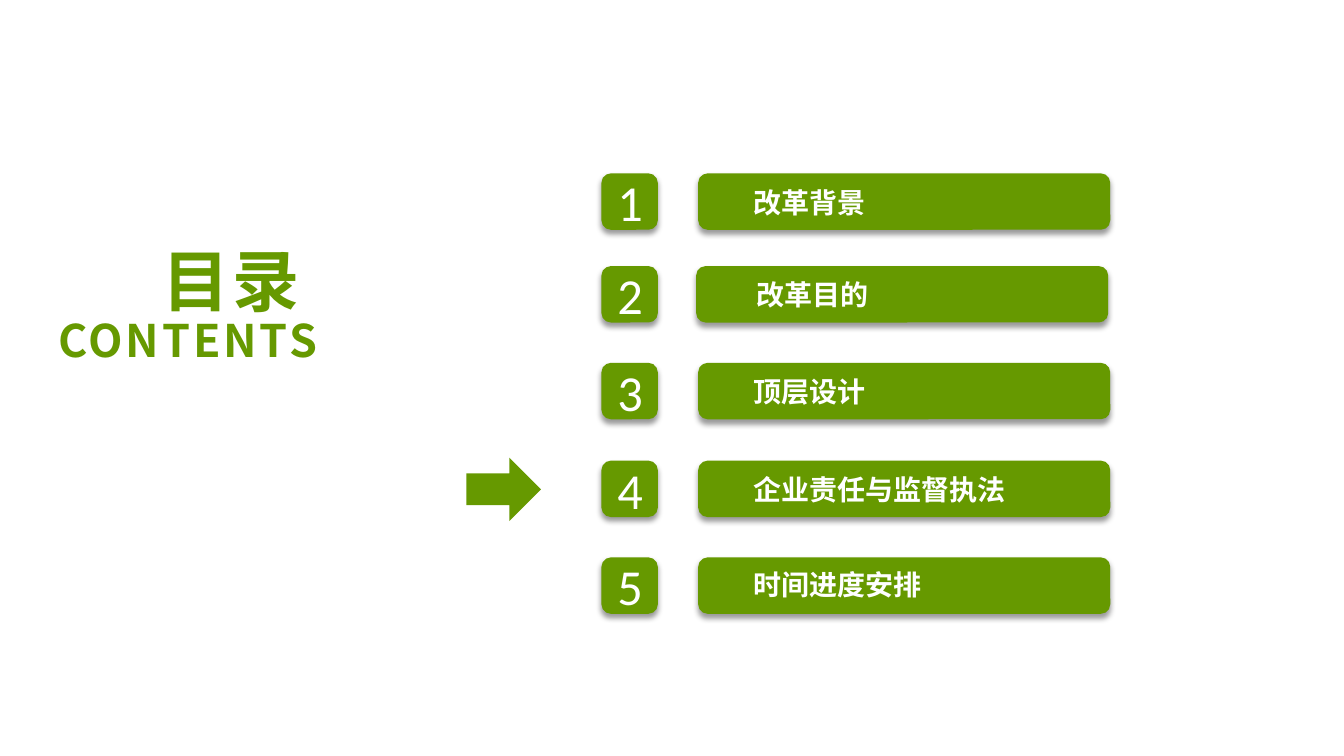
from lxml import etree
from pptx import Presentation
from pptx import util as u
from pptx.dml.color import RGBColor
from pptx.enum import shapes, text
from pptx.oxml import ns

GREEN = RGBColor(0x66, 0x99, 0x00)
WHITE = RGBColor(0xFF, 0xFF, 0xFF)
CJK_FONT = "Noto Sans CJK SC"
NUMBER_FONT = "Calibri"

BOX = 0.56
NUMBER_LEFT = 5.97
BAR_WIDTH = 4.09
# label, top, bar left, label left, label drop below the bar's top
CHAPTERS = [
    ("改革背景", 1.72, 6.93, 7.35, 0.05),
    ("改革目的", 2.64, 6.91, 7.38, 0.04),
    ("顶层设计", 3.60, 6.93, 7.35, 0.05),
    ("企业责任与监督执法", 4.57, 6.93, 7.35, 0.05),
    ("时间进度安排", 5.53, 6.93, 7.35, 0.03),
]


class ContentsSlide:
    def __init__(self, prs):
        self.s = prs.slides.add_slide(prs.slide_layouts[5])

    def place(self, sp, left, top, width, height):
        sp.left, sp.top = u.Inches(left), u.Inches(top)
        sp.width, sp.height = u.Inches(width), u.Inches(height)

    def frame(self, sp, anchor):
        tf = sp.text_frame
        tf.word_wrap = True
        tf.auto_size = text.MSO_AUTO_SIZE.NONE
        tf.vertical_anchor = anchor
        tf.margin_left = tf.margin_right = u.Inches(0.13)
        tf.margin_top = tf.margin_bottom = u.Inches(0.07)
        return tf

    def style(self, p, size, color, font=CJK_FONT, bold=True, spacing=0):
        """Format a paragraph's runs, with the East Asian font and letter spacing."""
        p.font.size, p.font.bold = u.Pt(size), bold
        p.font.name, p.font.color.rgb = font, color
        for r in p.runs:
            rpr = r._r.get_or_add_rPr()
            etree.SubElement(rpr, ns.qn("a:ea"), typeface=font)
            if spacing:
                rpr.set("spc", str(spacing * 100))

    def title(self, lines, left, top, width, height):
        sp = self.s.shapes.title
        self.place(sp, left, top, width, height)
        tf = self.frame(sp, text.MSO_ANCHOR.TOP)
        tf.text = "\n".join(line for line, _ in lines)
        for p, (_, size) in zip(tf.paragraphs, lines):
            p.alignment = text.PP_ALIGN.RIGHT
            p.line_spacing = 0.85
            self.style(p, size, GREEN, spacing=2)

    def shape(self, kind, left, top, width, height, parent=None):
        sp = (parent or self.s).shapes.add_shape(
            kind, *map(u.Inches, (left, top, width, height)))
        sp.fill.solid()
        sp.fill.fore_color.rgb = GREEN
        sp.line.fill.background()
        sp.shadow.inherit = False
        return sp

    def raised_box(self, left, top, width, parent=None):
        """Add a rounded box with a soft shadow below it."""
        sp = self.shape(shapes.MSO_SHAPE.ROUNDED_RECTANGLE,
                        left, top, width, BOX, parent)
        effects = sp._element.spPr.find(ns.qn("a:effectLst"))
        shadow = etree.SubElement(
            effects, ns.qn("a:outerShdw"), blurRad=str(u.Pt(4)),
            dist=str(u.Pt(3)), dir="5400000", rotWithShape="0")
        color = etree.SubElement(shadow, ns.qn("a:srgbClr"), val="000000")
        etree.SubElement(color, ns.qn("a:alpha"), val="40000")
        return sp

    def number(self, number, top):
        sp = self.raised_box(NUMBER_LEFT, top, BOX)
        tf = self.frame(sp, text.MSO_ANCHOR.MIDDLE)
        p = tf.paragraphs[0]
        p.text = str(number)
        p.alignment = text.PP_ALIGN.CENTER
        self.style(p, 36, WHITE, NUMBER_FONT, bold=False)

    def bar(self, label, top, left, label_left, drop):
        group = self.s.shapes.add_group_shape()
        self.raised_box(left, top, BAR_WIDTH, group)
        sp = group.shapes.add_textbox(
            *map(u.Inches, (label_left, top + drop, 2.99, 0.47)))
        p = self.frame(sp, text.MSO_ANCHOR.TOP).paragraphs[0]
        p.text = label
        self.style(p, 20, WHITE)


def main():
    prs = Presentation()
    prs.slide_width, prs.slide_height = u.Inches(13.34), u.Inches(7.5)
    contents = ContentsSlide(prs)
    contents.title([("目录 ", 48), ("CONTENTS", 32)], 0.21, 2.43, 3.07, 1.48)
    for number, (label, top, left, label_left, drop) in enumerate(CHAPTERS, 1):
        contents.number(number, top)
        contents.bar(label, top, left, label_left, drop)
    contents.shape(shapes.MSO_SHAPE.RIGHT_ARROW, 4.63, 4.54, 0.74, 0.63)
    prs.save("out.pptx")


if __name__ == "__main__":
    main()
